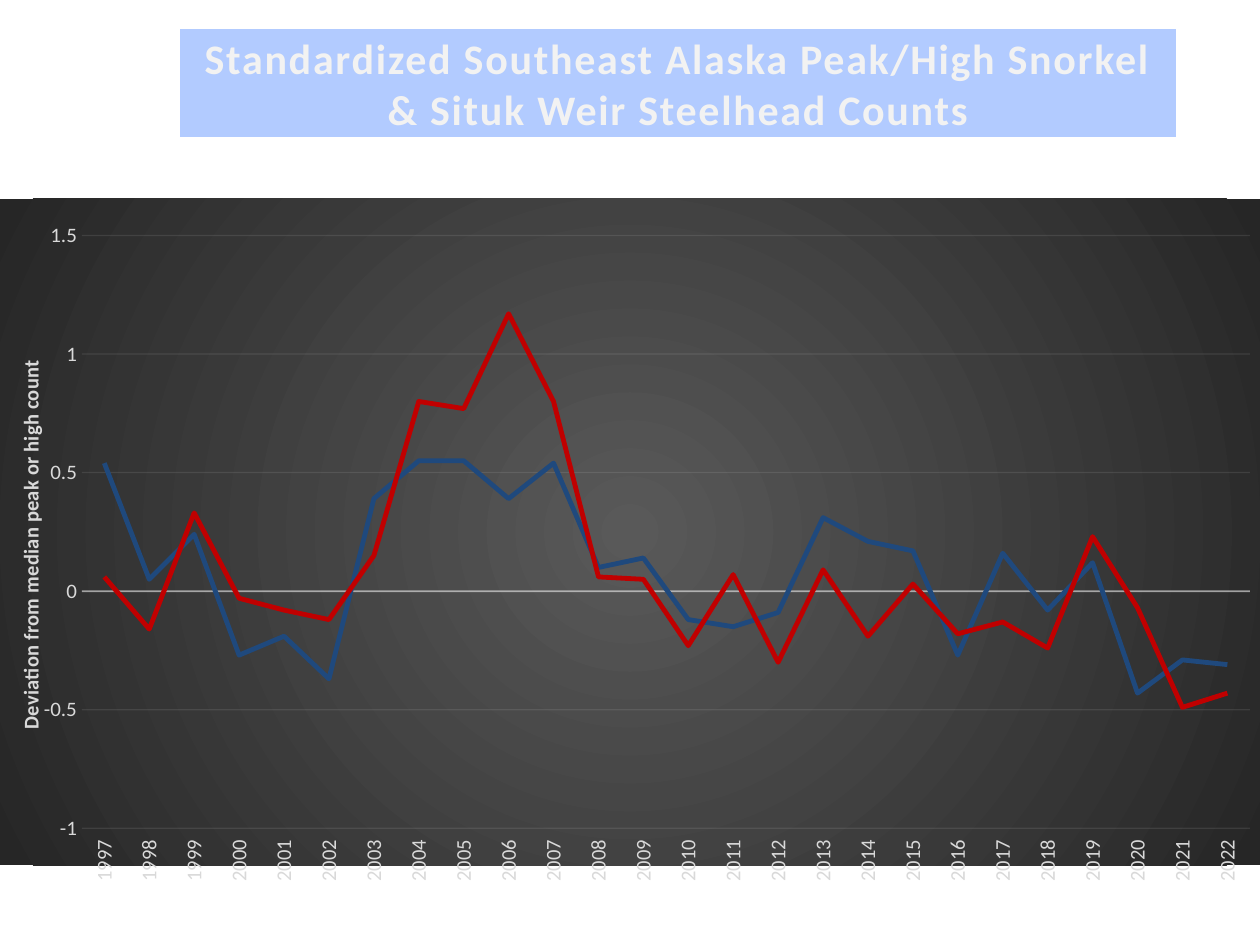
import lxml.etree
import pptx
import pptx.chart.data
import pptx.dml.color
import pptx.enum.chart
import pptx.enum.shapes
import pptx.enum.text
import pptx.oxml
import pptx.oxml.ns
import pptx.util

Cm, Pt = pptx.util.Cm, pptx.util.Pt
RGBColor = pptx.dml.color.RGBColor
qn = pptx.oxml.ns.qn

FONT = "Calibri"
WHITE = RGBColor(0xFF, 0xFF, 0xFF)
BLACK = RGBColor(0x00, 0x00, 0x00)
PALE_GREY = RGBColor(0xF2, 0xF2, 0xF2)
LABEL_GREY = RGBColor(0xD9, 0xD9, 0xD9)
MID_GREY = RGBColor(0x59, 0x59, 0x59)
DARK_GREY = RGBColor(0x26, 0x26, 0x26)
BANNER_BLUE = RGBColor(0x66, 0x99, 0xFF)
SNORKEL_BLUE = RGBColor(0x1F, 0x49, 0x7D)
WEIR_RED = RGBColor(0xC0, 0x00, 0x00)

YEARS = [str(year) for year in range(1997, 2023)]
COUNTS = [
    ("Southeast Snorkel", SNORKEL_BLUE,
     [0.54, 0.05, 0.24, -0.27, -0.19, -0.37, 0.39, 0.55, 0.55, 0.39, 0.54, 0.1, 0.14,
      -0.12, -0.15, -0.09, 0.31, 0.21, 0.17, -0.27, 0.16, -0.08, 0.12, -0.43, -0.29, -0.31]),
    ("Situk Weir", WEIR_RED,
     [0.06, -0.16, 0.33, -0.03, -0.08, -0.12, 0.15, 0.8, 0.77, 1.17, 0.8, 0.06, 0.05,
      -0.23, 0.07, -0.3, 0.09, -0.19, 0.03, -0.18, -0.13, -0.24, 0.23, -0.07, -0.49, -0.43]),
]


def set_font(font, size, color, bold=False):
    font.name, font.size, font.bold = FONT, Pt(size), bold
    font.color.rgb = color


def write_text(frame, text, size, color, bold=False, align=None, spacing=0):
    para = frame.paragraphs[0]
    para.alignment = align
    span = para.add_run()
    span.text = text
    set_font(span.font, size, color, bold)
    if spacing:
        span.font._element.set("spc", str(spacing * 100))


def set_opacity(element, percent):
    """Make every colour inside the element partly transparent."""
    for color in element.iter(qn("a:srgbClr")):
        lxml.etree.SubElement(color, qn("a:alpha")).set("val", str(percent * 1000))


def set_layout(parent, index, **settings):
    """Place a chart part by hand, in fractions of the chart."""
    for old in parent.findall(qn("c:layout")):
        parent.remove(old)
    layout = lxml.etree.Element(qn("c:layout"))
    manual = lxml.etree.SubElement(layout, qn("c:manualLayout"))
    for name, value in settings.items():
        lxml.etree.SubElement(manual, qn("c:" + name)).set("val", str(value))
    parent.insert(index, layout)


def fill_radial(chart, inner, outer):
    """Fill the chart area from its centre outwards."""
    area = pptx.oxml.parse_xml(
        f'<c:spPr {pptx.oxml.ns.nsdecls("c", "a")}><a:gradFill><a:gsLst>'
        f'<a:gs pos="0"><a:srgbClr val="{inner}"/></a:gs>'
        f'<a:gs pos="100000"><a:srgbClr val="{outer}"/></a:gs></a:gsLst>'
        '<a:path path="circle"><a:fillToRect l="50000" t="50000" r="50000" b="50000"/>'
        '</a:path></a:gradFill><a:ln><a:noFill/></a:ln></c:spPr>')
    chart._chartSpace.find(qn("c:chart")).addnext(area)


def add_banner(page, left, top, width, height):
    box = page.shapes.add_shape(
        pptx.enum.shapes.MSO_SHAPE.RECTANGLE, left, top, width, height)
    box.shadow.inherit = False
    box.fill.solid()
    box.fill.fore_color.rgb = BANNER_BLUE
    set_opacity(box._element.spPr, 50)
    box.line.color.rgb = WHITE
    box.line.width = Pt(1.5)
    frame = box.text_frame
    frame.word_wrap = True
    frame.vertical_anchor = pptx.enum.text.MSO_ANCHOR.MIDDLE
    frame.margin_left = frame.margin_right = Cm(0.18)
    frame.margin_top = frame.margin_bottom = Cm(0.1)
    write_text(frame, "Standardized Southeast Alaska Peak/High Snorkel & Situk Weir Steelhead Counts",
               size=24, color=PALE_GREY, bold=True,
               align=pptx.enum.text.PP_ALIGN.CENTER, spacing=1)


def style_year_axis(axis):
    axis.major_tick_mark = pptx.enum.chart.XL_TICK_MARK.NONE
    axis.tick_label_position = pptx.enum.chart.XL_TICK_LABEL_POSITION.LOW
    set_font(axis.tick_labels.font, 12, LABEL_GREY)
    axis._element.find(qn("c:txPr")).find(qn("a:bodyPr")).set("rot", "-5400000")
    axis.format.line.color.rgb = PALE_GREY
    axis.format.line.width = Pt(1)
    set_opacity(axis._element.find(qn("c:spPr")), 54)


def style_deviation_axis(axis):
    axis.minimum_scale, axis.maximum_scale, axis.major_unit = -1, 1.5, 0.5
    axis.major_tick_mark = pptx.enum.chart.XL_TICK_MARK.NONE
    set_font(axis.tick_labels.font, 12, LABEL_GREY)
    axis.format.line.fill.background()
    # Gridlines
    grid = axis.major_gridlines.format.line
    grid.color.rgb = PALE_GREY
    grid.width = Pt(0.75)
    set_opacity(axis._element.find(qn("c:majorGridlines")), 10)
    # Upright title
    title = axis.axis_title
    write_text(title.text_frame, "Deviation from median peak or high count",
               size=12, color=LABEL_GREY, bold=True)
    title.text_frame._element.find(qn("a:bodyPr")).set("rot", "-5400000")
    set_layout(title._element, 1, xMode="edge", yMode="edge", x=0.01, y=0.25)


def add_count_chart(page, left, top, width, height):
    data = pptx.chart.data.CategoryChartData()
    data.categories = YEARS
    for name, _, values in COUNTS:
        data.add_series(name, values)
    chart = page.shapes.add_chart(
        pptx.enum.chart.XL_CHART_TYPE.LINE, left, top, width, height, data).chart
    chart.has_title = chart.has_legend = False
    set_font(chart.font, 10, BLACK)
    fill_radial(chart, MID_GREY, DARK_GREY)
    style_year_axis(chart.category_axis)
    style_deviation_axis(chart.value_axis)
    set_layout(chart._chartSpace.find(".//" + qn("c:plotArea")), 0,
               layoutTarget="inner", xMode="edge", yMode="edge",
               x=0.065, y=0.055, w=0.927, h=0.89)
    # Lines
    plot = chart.plots[0]
    plot.vary_by_categories = False
    for series, (_, color, _) in zip(plot.series, COUNTS):
        series.smooth = False
        series.format.line.color.rgb = color
        series.format.line.width = Pt(2.75)


def main():
    deck = pptx.Presentation()
    deck.slide_width, deck.slide_height = Cm(25.4), Cm(19.05)
    page = deck.slides.add_slide(deck.slide_layouts[6])
    add_banner(page, Cm(3.61), Cm(0.56), Cm(20.12), Cm(2.24))
    add_count_chart(page, Cm(0), Cm(4.01), deck.slide_width, Cm(13.77))
    deck.save("out.pptx")


if __name__ == "__main__":
    main()
